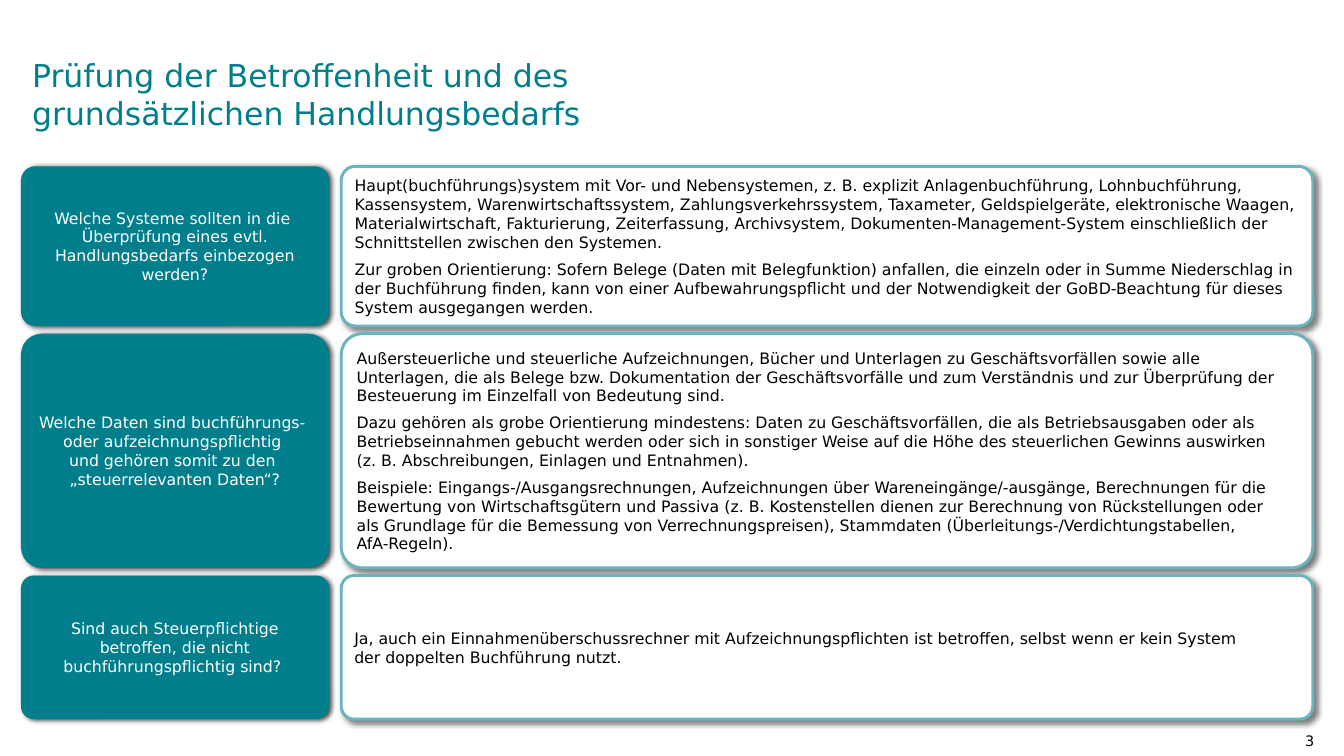
from dataclasses import dataclass

from lxml import etree
from pptx import Presentation
from pptx.dml.color import RGBColor
from pptx.enum.shapes import MSO_SHAPE
from pptx.enum.text import MSO_ANCHOR, PP_ALIGN
from pptx.oxml.ns import qn
from pptx.shapes.autoshape import Shape
from pptx.slide import Slide
from pptx.text.text import TextFrame
from pptx.util import Pt

ROUNDED = MSO_SHAPE.ROUNDED_RECTANGLE
TOP, MIDDLE = MSO_ANCHOR.TOP, MSO_ANCHOR.MIDDLE
LEFT, CENTER, RIGHT = PP_ALIGN.LEFT, PP_ALIGN.CENTER, PP_ALIGN.RIGHT

FONT = "DejaVu Sans"
COLORS = {
    "teal": "007E8C",
    "light_teal": "69B4BD",
    "white": "FFFFFF",
    "black": "000000",
}
FIRST_ROW_TOP = 126.7
ROW_GAP = 5.8
CORNER = 0.089


@dataclass(frozen=True)
class BoxStyle:
    left: float
    width: float
    fill: str
    line: str | None
    text_color: str
    alignment: PP_ALIGN
    space_before: float
    shadow_opacity: int
    shadow_distance: float
    shadow_angle: int


@dataclass(frozen=True)
class Row:
    height: float
    question: list[str]
    answer: list[str]


QUESTION = BoxStyle(16, 234.7, "teal", None, "white", CENTER, 0, 70, 2, 20)
ANSWER = BoxStyle(260, 740.2, "white", "light_teal", "black", LEFT, 6, 50, 3, 40)

ROWS = [
    Row(
        121.7,
        [
            "Welche Systeme sollten in die ",
            "Überprüfung eines evtl. Handlungsbedarfs einbezogen werden?",
        ],
        [
            "Haupt(buchführungs)system mit Vor- und Nebensystemen, z. B. explizit "
            "Anlagenbuchführung, Lohnbuchführung, Kassensystem, Warenwirtschaftssystem, "
            "Zahlungsverkehrssystem, Taxameter, Geldspielgeräte, elektronische Waagen, "
            "Materialwirtschaft, Fakturierung, Zeiterfassung, Archivsystem, "
            "Dokumenten-Management-System einschließlich der Schnittstellen zwischen "
            "den Systemen.",
            "Zur groben Orientierung: Sofern Belege (Daten mit Belegfunktion) anfallen, "
            "die einzeln oder in Summe Niederschlag in der Buchführung finden, kann von "
            "einer Aufbewahrungspflicht und der Notwendigkeit der GoBD-Beachtung für "
            "dieses System ausgegangen werden.",
        ],
    ),
    Row(
        178.5,
        [
            "Welche Daten sind buchführungs- ",
            "oder aufzeichnungspflichtig ",
            "und gehören somit zu den ",
            "„steuerrelevanten Daten“?",
        ],
        [
            "Außersteuerliche und steuerliche Aufzeichnungen, Bücher und Unterlagen zu "
            "Geschäftsvorfällen sowie alle Unterlagen, die als Belege bzw. Dokumentation "
            "der Geschäftsvorfälle und zum Verständnis und zur Überprüfung der "
            "Besteuerung im Einzelfall von Bedeutung sind.",
            "Dazu gehören als grobe Orientierung mindestens: Daten zu Geschäftsvorfällen, "
            "die als Betriebsausgaben oder als Betriebseinnahmen gebucht werden oder sich "
            "in sonstiger Weise auf die Höhe des steuerlichen Gewinns auswirken \n"
            "(z. B. Abschreibungen, Einlagen und Entnahmen).",
            "Beispiele: Eingangs-/Ausgangsrechnungen, Aufzeichnungen über "
            "Wareneingänge/-ausgänge, Berechnungen für die Bewertung von "
            "Wirtschaftsgütern und Passiva (z. B. Kostenstellen dienen zur Berechnung "
            "von Rückstellungen oder \nals Grundlage für die Bemessung von "
            "Verrechnungspreisen), Stammdaten (Überleitungs-/Verdichtungstabellen, \n"
            "AfA-Regeln).",
        ],
    ),
    Row(
        109.4,
        [
            "Sind auch Steuerpflichtige betroffen, die nicht "
            "buchführungspflichtig sind? ",
        ],
        [
            "Ja, auch ein Einnahmenüberschussrechner mit Aufzeichnungspflichten ist "
            "betroffen, selbst wenn er kein System \nder doppelten Buchführung nutzt.",
        ],
    ),
]


def rgb(name: str) -> RGBColor:
    return RGBColor.from_string(COLORS[name])


def write_paragraphs(frame: TextFrame, texts: list[str], size: float, color: str,
                     alignment: PP_ALIGN, space_before: float = 0) -> None:
    """Write one paragraph per text; a newline inside a text is a line break."""
    frame.word_wrap = True
    for index, text in enumerate(texts):
        paragraph = frame.add_paragraph() if index else frame.paragraphs[0]
        paragraph.text = text
        paragraph.alignment = alignment
        paragraph.space_before = Pt(space_before if index else 0)
        paragraph.font.name = FONT
        paragraph.font.size = Pt(size)
        paragraph.font.color.rgb = rgb(color)


def add_shadow(shape: Shape, style: BoxStyle) -> None:
    shape.shadow.inherit = False
    effects = shape._element.spPr.find(qn("a:effectLst"))
    shadow = etree.SubElement(
        effects, qn("a:outerShdw"), blurRad=str(Pt(4)),
        dist=str(Pt(style.shadow_distance)), dir=str(style.shadow_angle * 60000),
        algn="tl", rotWithShape="0")
    color = etree.SubElement(shadow, qn("a:srgbClr"), val=COLORS["black"])
    etree.SubElement(color, qn("a:alpha"), val=str(style.shadow_opacity * 1000))


def add_box(slide: Slide, style: BoxStyle, top: float, height: float,
            texts: list[str]) -> None:
    shape = slide.shapes.add_shape(
        ROUNDED, Pt(style.left), Pt(top), Pt(style.width), Pt(height))
    shape.adjustments[0] = CORNER
    shape.fill.solid()
    shape.fill.fore_color.rgb = rgb(style.fill)
    if style.line:
        shape.line.color.rgb = rgb(style.line)
        shape.line.width = Pt(2.25)
    else:
        shape.line.fill.background()
    add_shadow(shape, style)
    shape.text_frame.vertical_anchor = MIDDLE
    write_paragraphs(shape.text_frame, texts, 12, style.text_color,
                     style.alignment, style.space_before)


def add_label(slide: Slide, bounds: tuple[float, float, float, float],
              insets: tuple[float, float, float, float], anchor: MSO_ANCHOR,
              text: str, size: float, color: str, alignment: PP_ALIGN) -> None:
    """Add a text box; insets are left, top, right and bottom."""
    frame = slide.shapes.add_textbox(*map(Pt, bounds)).text_frame
    (frame.margin_left, frame.margin_top,
     frame.margin_right, frame.margin_bottom) = map(Pt, insets)
    frame.vertical_anchor = anchor
    write_paragraphs(frame, [text], size, color, alignment)


def main() -> None:
    presentation = Presentation()
    presentation.slide_width = Pt(1024)
    presentation.slide_height = Pt(576)
    slide = presentation.slides.add_slide(presentation.slide_layouts[6])

    add_label(slide, (24.5, 35.3, 690, 72.7), (0, 0, 9.4, 0), MIDDLE,
              "Prüfung der Betroffenheit und des \ngrundsätzlichen Handlungsbedarfs",
              24, "teal", LEFT)
    top = FIRST_ROW_TOP
    for row in ROWS:
        add_box(slide, QUESTION, top, row.height, row.question)
        add_box(slide, ANSWER, top, row.height, row.answer)
        top += row.height + ROW_GAP
    add_label(slide, (928.8, 553.7, 82, 15), (9.4, 4.3, 9.4, 4.3), TOP,
              "3", 11, "black", RIGHT)

    presentation.save("out.pptx")


if __name__ == "__main__":
    main()
